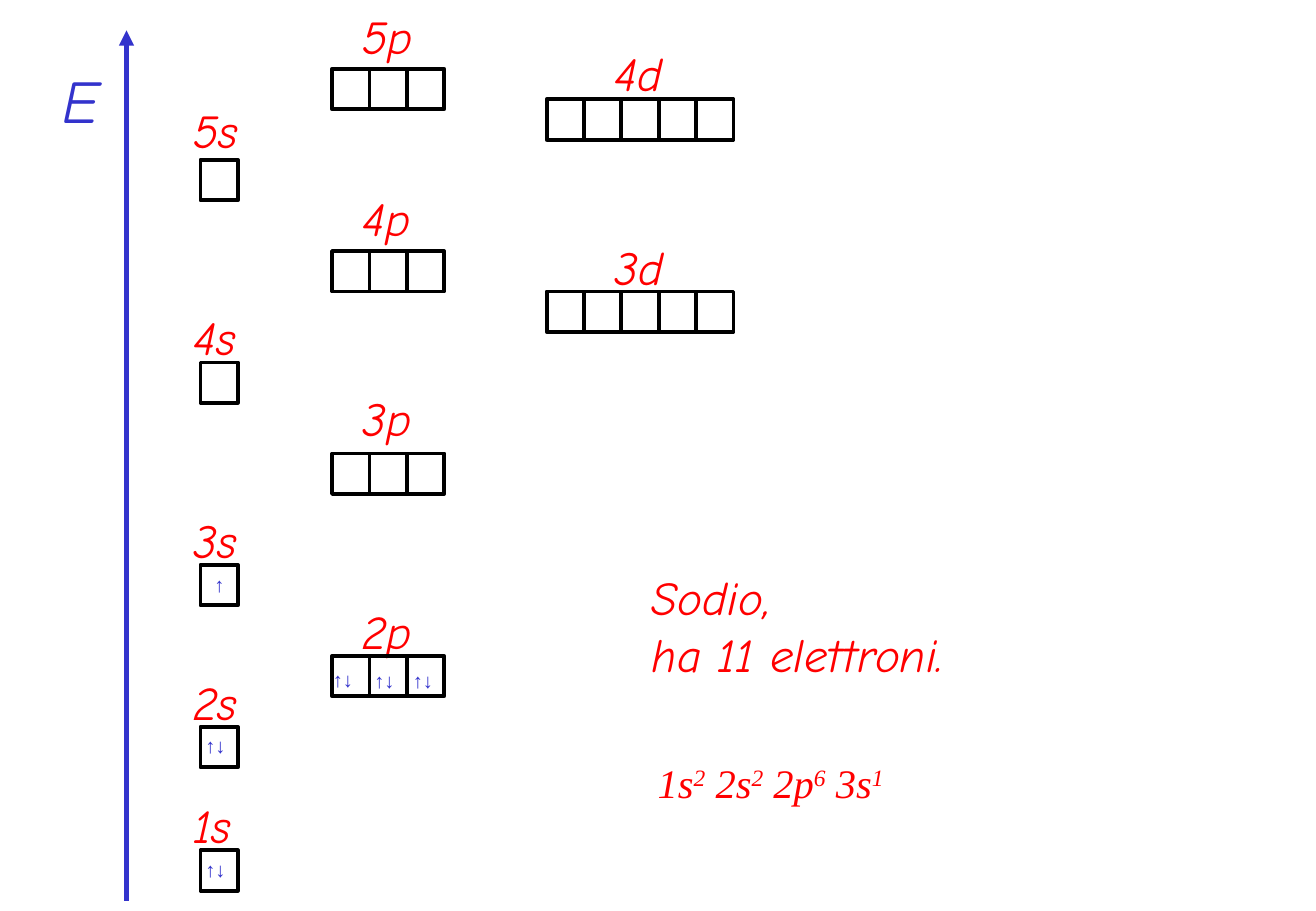
"""Orbital energy diagram of sodium, drawn on a grid of 130 by 90 steps."""
from dataclasses import dataclass

from lxml import etree
from pptx import Presentation
from pptx.dml.color import RGBColor
from pptx.enum.shapes import MSO_CONNECTOR, MSO_SHAPE
from pptx.oxml.ns import qn
from pptx.util import Inches, Pt

RECTANGLE = MSO_SHAPE.RECTANGLE
STRAIGHT = MSO_CONNECTOR.STRAIGHT
COLUMNS, ROWS = 130, 90
STEP = Inches(1) / 12
CELL_PITCH, CELL_WIDTH, CELL_HEIGHT = 3.69, 3.7, 4
RED, BLUE, BLACK = "FF0000", "3333CC", "000000"
LABEL = {"name": "Comic Neue", "size": Pt(28), "italic": True}
AXIS_LABEL = {**LABEL, "size": Pt(36)}
SPIN = {"name": "Times New Roman", "size": Pt(12), "bold": True}
FORMULA = {"name": "Times New Roman", "size": Pt(24), "italic": True}
SUPERSCRIPT = "30000"


@dataclass(frozen=True)
class Area:
    """A rectangle in grid columns and rows."""
    column: float
    row: float
    width: float
    height: float


@dataclass(frozen=True)
class Series:
    """The shared layout of all subshells of one type."""
    cells: int
    column: float
    label_column: float
    label_width: float


@dataclass(frozen=True)
class Subshell:
    """A labelled row of orbital cells."""
    name: str
    row: float
    label_row: float


@dataclass(frozen=True)
class Electrons:
    """The spin arrows in one orbital."""
    arrows: str
    area: Area


SERIES = {
    "s": Series(1, 19.8, 17.9, 7.6),
    "p": Series(3, 32.8, 34.6, 7.8),
    "d": Series(5, 54, 59.5, 8),
}
SUBSHELLS = [
    Subshell("1s", 84, 78.1), Subshell("2s", 71.8, 65.9),
    Subshell("3s", 55.8, 49.9), Subshell("4s", 35.8, 29.9),
    Subshell("5s", 15.8, 9.4), Subshell("2p", 64.8, 58.9),
    Subshell("3p", 44.8, 37.9), Subshell("4p", 24.8, 18.1),
    Subshell("5p", 6.8, 0.1), Subshell("3d", 28.8, 22.9),
    Subshell("4d", 9.8, 3.8),
]
ELECTRONS = [
    Electrons("↑↓", Area(19.1, 84.1, 4.8, 3.6)),
    Electrons("↑↓", Area(19.1, 71.9, 4.8, 3.6)),
    Electrons("↑", Area(20, 56, 3.6, 3.6)),
    Electrons("↑↓", Area(31.7, 65.3, 4.8, 3.6)),
    Electrons("↑↓", Area(35.8, 65.4, 4.8, 3.6)),
    Electrons("↑↓", Area(39.6, 65.4, 4.8, 3.6)),
]
CONFIGURATION = [("1s", "2"), (" 2s", "2"), (" 2p", "6"), (" 3s", "1")]


def steps(count: float) -> int:
    """Turn grid steps into a length."""
    return round(count * STEP)


def place(area: Area) -> list[int]:
    """Return left, top, width and height of an area."""
    return [steps(n) for n in (area.column, area.row, area.width, area.height)]


def paint(color_format, color: str) -> None:
    """Set a colour from a hex string."""
    color_format.rgb = RGBColor.from_string(color)


def add_span(para, text: str, style: dict, color: str):
    """Add a formatted run to a paragraph."""
    span = para.add_run()
    span.text = text
    for key, value in style.items():
        setattr(span.font, key, value)
    paint(span.font.color, color)
    return span


def add_text(page, area: Area, lines: list[str], style: dict, color: str,
             wrap: bool = False):
    """Add a text box with one paragraph for each line."""
    frame = page.shapes.add_textbox(*place(area)).text_frame
    frame.word_wrap = wrap
    for index, line in enumerate(lines):
        para = frame.add_paragraph() if index else frame.paragraphs[0]
        add_span(para, line, style, color)
    return frame


def add_subshell(page, subshell: Subshell) -> None:
    """Draw the label and the cells of a subshell."""
    series = SERIES[subshell.name[-1]]
    label = Area(series.label_column, subshell.label_row, series.label_width, 6.8)
    add_text(page, label, [subshell.name], LABEL, RED)
    for index in range(series.cells):
        cell = Area(series.column + index * CELL_PITCH, subshell.row,
                    CELL_WIDTH, CELL_HEIGHT)
        box = page.shapes.add_shape(RECTANGLE, *place(cell))
        box.shadow.inherit = False
        box.fill.background()
        box.line.width = Pt(2.25)
        paint(box.line.color, BLACK)


def add_energy_axis(page) -> None:
    """Draw the upward energy arrow and its label."""
    ends = [steps(n) for n in (12.5, 89, 12.5, 3)]
    axis = page.shapes.add_connector(STRAIGHT, *ends)
    axis.line.width = Pt(3)
    paint(axis.line.color, BLUE)
    properties = axis._element.spPr
    etree.SubElement(properties.find(qn("a:ln")), qn("a:tailEnd"), type="triangle")
    etree.SubElement(properties, qn("a:effectLst"))
    add_text(page, Area(5, 5.6, 6.1, 8.4), ["E"], AXIS_LABEL, BLUE)


def add_configuration(page) -> None:
    """Write the electron configuration with raised counts."""
    frame = add_text(page, Area(63.8, 74.3, 25.7, 10.9), [], FORMULA, RED, True)
    para = frame.paragraphs[0]
    for orbital, count in CONFIGURATION:
        add_span(para, orbital, FORMULA, RED)
        raised = add_span(para, count, FORMULA, RED)
        raised.font._element.set("baseline", SUPERSCRIPT)


def main() -> None:
    """Build and save the deck."""
    deck = Presentation()
    deck.slide_width, deck.slide_height = steps(COLUMNS), steps(ROWS)
    page = deck.slides.add_slide(deck.slide_layouts[6])
    for subshell in SUBSHELLS:
        add_subshell(page, subshell)
    add_energy_axis(page)
    add_text(page, Area(63.2, 55.6, 55.4, 18), ["Sodio,", "ha 11 elettroni."],
             LABEL, RED, True)
    for electrons in ELECTRONS:
        add_text(page, electrons.area, [electrons.arrows], SPIN, BLUE)
    add_configuration(page)
    deck.save("out.pptx")


if __name__ == "__main__":
    main()
